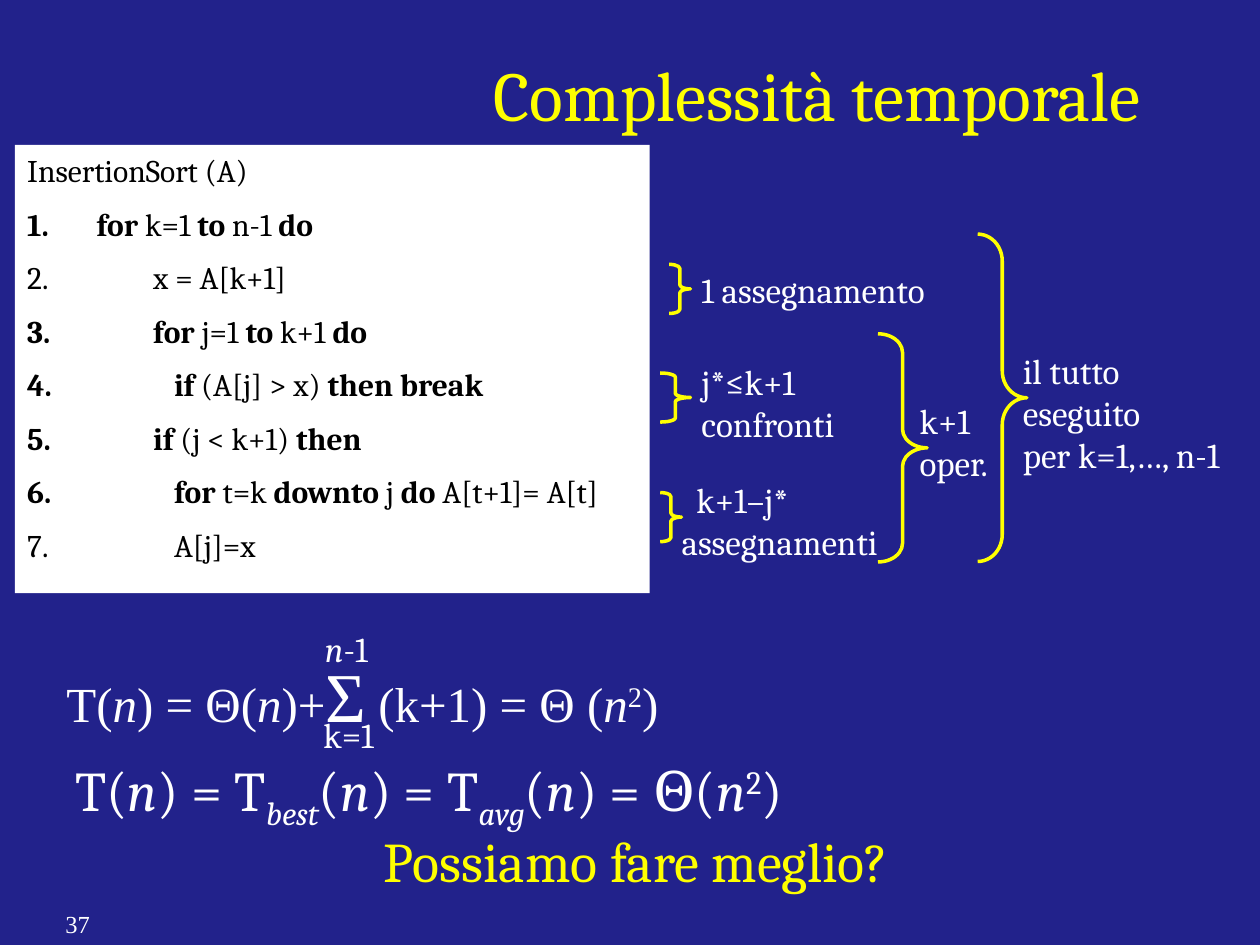
from pptx import Presentation
from pptx.dml.color import RGBColor
from pptx.enum.shapes import MSO_SHAPE
from pptx.enum.text import MSO_ANCHOR, MSO_AUTO_SIZE, PP_ALIGN
from pptx.oxml.ns import qn
from pptx.util import Cm, Pt
from lxml.etree import SubElement

NAVY = RGBColor(0x22, 0x22, 0x8B)
YELLOW = RGBColor(0xFF, 0xFF, 0x00)
WHITE = RGBColor(0xFF, 0xFF, 0xFF)
BLACK = RGBColor(0x00, 0x00, 0x00)
SERIF = "Cambria"
TIMES = "Times New Roman"
BASELINES = {"^": "30000", "_": "-25000"}


class SlideBuilder:
    """Holds the style and the current slide."""

    def __init__(self, slide, font=SERIF, size=20, color=WHITE):
        self.slide = slide
        self.font, self.size, self.color = font, size, color
        slide.background.fill.solid()
        slide.background.fill.fore_color.rgb = NAVY

    def runs(self, p, parts, size=None, color=None, font=None):
        """Parts are strings or (text, marks[, size]); marks: b, i, ^ and _."""
        for part in parts:
            text, marks, *own = (part, "") if isinstance(part, str) else part
            r = p.add_run()
            r.text = text
            r.font.name = font or self.font
            r.font.size = Pt(own[0] if own else size or self.size)
            r.font.color.rgb = color or self.color
            r.font.bold = "b" in marks
            r.font.italic = "i" in marks
            for mark, value in BASELINES.items():
                if mark in marks:
                    r.font._element.set("baseline", value)

    def text(self, box, lines, wrap=False, first_indent=0, **style):
        tf = self.slide.shapes.add_textbox(*map(Cm, box)).text_frame
        tf.word_wrap = wrap
        tf.auto_size = MSO_AUTO_SIZE.NONE
        for n, parts in enumerate(lines):
            p = tf.add_paragraph() if n else tf.paragraphs[0]
            if first_indent and n == 0:
                p._p.get_or_add_pPr().set("indent", str(Cm(first_indent)))
            self.runs(p, parts, **style)

    def code(self, box, heading, steps, indents):
        sp = self.slide.shapes.add_shape(MSO_SHAPE.RECTANGLE, *map(Cm, box))
        sp.shadow.inherit = False
        sp.fill.solid()
        sp.fill.fore_color.rgb = WHITE
        sp.line.fill.background()
        tf = sp.text_frame
        tf.word_wrap = True
        tf.vertical_anchor = MSO_ANCHOR.TOP
        p = tf.paragraphs[0]
        p.alignment = PP_ALIGN.LEFT
        self.runs(p, [heading], size=18, color=BLACK)
        for level, parts in steps:
            p = tf.add_paragraph()
            p.alignment = PP_ALIGN.LEFT
            p.space_before = Pt(9)
            pPr = p._p.get_or_add_pPr()
            pPr.set("marL", str(Cm(indents[level])))
            pPr.set("indent", str(-Cm(indents[level])))
            SubElement(pPr, qn("a:buFont"), typeface="+mj-lt")
            SubElement(pPr, qn("a:buAutoNum"), type="arabicPeriod")
            self.runs(p, parts, size=18, color=BLACK)

    def brace(self, box, curl):
        sp = self.slide.shapes.add_shape(MSO_SHAPE.RIGHT_BRACE, *map(Cm, box))
        sp.shadow.inherit = False
        sp.adjustments[0] = curl
        sp.fill.background()
        sp.line.color.rgb = YELLOW
        sp.line.width = Pt(2)


def main():
    prs = Presentation()
    prs.slide_width, prs.slide_height = Cm(25.4), Cm(19.05)
    s = SlideBuilder(prs.slides.add_slide(prs.slide_layouts[6]))

    # Title
    s.text((9.7, 0.91, 14.6, 1.96), [["Complessità temporale"]],
           wrap=True, size=40, color=YELLOW)

    # Algorithm
    steps = [
        (0, [("for", "b"), " k=1 ", ("to", "b"), " n-1 ", ("do", "b")]),
        (1, ["x = A[k+1]"]),
        (1, [("for", "b"), " j=1 ", ("to", "b"), " k+1", (" do", "b")]),
        (2, [("if", "b"), " (A[j] > x) ", ("then break", "b")]),
        (1, [("if", "b"), " (j < k+1) ", ("then", "b")]),
        (2, [("for", "b"), " t=k ", ("downto", "b"), " j ", ("do", "b"),
             " A[t+1]= A[t]"]),
        (2, ["A[j]=x"]),
    ]
    s.code((0.3, 2.92, 12.8, 9.04), "InsertionSort (A)", steps,
           indents=(1.4, 2.54, 2.96))

    # Braces
    for box, curl in [
        ((13.49, 5.33, 0.43, 0.99), 0.19),
        ((13.31, 7.52, 0.61, 0.99), 0.14),
        ((13.31, 9.93, 0.43, 0.99), 0.19),
        ((17.7, 6.73, 0.99, 4.6), 0.38),
        ((19.71, 4.72, 0.99, 6.6), 0.55),
    ]:
        s.brace(box, curl)

    # Costs beside the braces
    s.text((13.89, 5.28, 5.51, 1.09), [["1 assegnamento"]])
    s.text((13.89, 7.14, 3.2, 1.96), [["j*≤k+1 confronti"]], wrap=True)
    s.text((13.49, 9.53, 6.2, 1.96), [["k+1–j*"], ["assegnamenti"]],
           wrap=True, first_indent=0.3)
    s.text((18.29, 7.92, 1.93, 1.96), [["k+1"], ["oper."]])
    s.text((20.37, 6.93, 4.8, 1.96),
           [["il tutto eseguito"], ["per k=1,…, n-1"]], wrap=True)

    # Sum with its limits
    s.text((1.09, 13.03, 14.2, 3.2),
           [["T(", ("n", "i"), ") = Θ(", ("n", "i"), ")+", ("Σ", "", 40),
             " (k+1) = Θ (", ("n", "i"), ("2", "^"), ")"]],
           wrap=True, size=28, font=TIMES)
    s.text((6.27, 14.25, 1.63, 1.09), [["k=1"]])
    s.text((6.3, 12.52, 1.45, 1.09), [[("n", "i"), "-1"]])

    # Result and closing question
    s.text((1.27, 15.11, 15.04, 1.63),
           [["T(", ("n", "i"), ") = T", ("best", "i_"), "(", ("n", "i"),
             ") = T", ("avg", "i_"), "(", ("n", "i"), ") = Θ(", ("n", "i"),
             ("2", "^"), ")"]], size=32)
    s.text((7.49, 16.54, 10.8, 1.6), [["Possiamo fare meglio?"]],
           size=32, color=YELLOW)

    # Page number
    s.text((1.07, 18.21, 5.28, 0.84), [["37"]], wrap=True, size=14, font=TIMES)

    prs.save("out.pptx")


if __name__ == "__main__":
    main()
